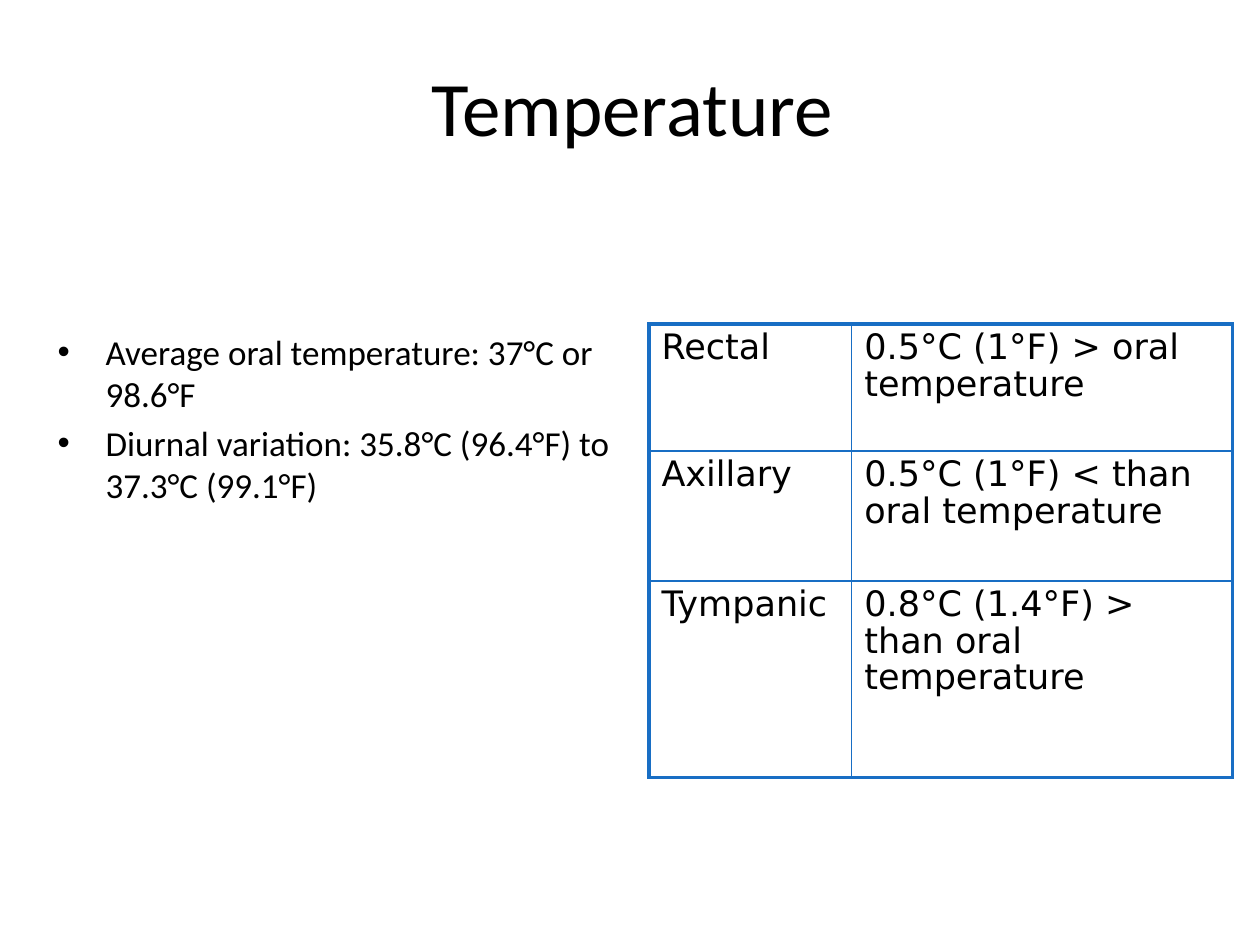
from dataclasses import dataclass

from lxml.etree import SubElement
from pptx import Presentation
from pptx.dml.color import RGBColor
from pptx.enum.text import MSO_ANCHOR, PP_ALIGN
from pptx.oxml.ns import qn
from pptx.util import Inches, Pt


@dataclass(frozen=True)
class Theme:
    ink: RGBColor = RGBColor(0, 0, 0)
    border: str = "186EC4"
    text_font: str = "Calibri"
    table_font: str = "DejaVu Sans"
    title_size: int = 44
    body_size: int = 20
    outer_line: float = 2.25
    inner_line: float = 1


@dataclass(frozen=True)
class Reading:
    site: str
    difference: str
    height: float


THEME = Theme()
FACTS = (
    "Average oral temperature: 37°C or 98.6°F",
    "Diurnal variation: 35.8°C (96.4°F) to 37.3°C (99.1°F)",
)
READINGS = (
    Reading("Rectal", "0.5°C (1°F) > oral temperature", 1.01),
    Reading("Axillary", "0.5°C (1°F) < than oral temperature", 1.03),
    Reading("Tympanic", "0.8°C (1.4°F) > than oral temperature", 1.56),
)
COLUMN_WIDTHS = (1.61, 3.02)
CONTENT_TOP = 2.57


def add_span(para, text: str, font: str, size: int) -> None:
    span = para.add_run()
    span.text = text
    span.font.name = font
    span.font.size = Pt(size)
    span.font.color.rgb = THEME.ink


def add_bullet(para, indent: float) -> None:
    properties = para._p.get_or_add_pPr()
    properties.set("marL", str(Inches(indent)))
    properties.set("indent", str(Inches(-indent)))
    SubElement(properties, qn("a:buFont"), typeface="Arial")
    SubElement(properties, qn("a:buChar"), char="•")


def set_borders(cell, outer_sides: dict[str, bool]) -> None:
    """Draw all four sides, heavier where a side lies on the table's edge."""
    properties = cell._tc.get_or_add_tcPr()
    for index, (side, is_outer) in enumerate(outer_sides.items()):
        width = THEME.outer_line if is_outer else THEME.inner_line
        line = SubElement(properties, qn(f"a:{side}"), w=str(Pt(width)))
        fill = SubElement(line, qn("a:solidFill"))
        SubElement(fill, qn("a:srgbClr"), val=THEME.border)
        properties.insert(index, line)


def format_title(page) -> None:
    title = page.shapes.title
    title.left, title.top = Inches(0.36), Inches(0.25)
    title.width, title.height = Inches(9.32), Inches(1.17)
    title.text_frame.vertical_anchor = MSO_ANCHOR.MIDDLE
    para = title.text_frame.paragraphs[0]
    para.alignment = PP_ALIGN.CENTER
    add_span(para, "Temperature", THEME.text_font, THEME.title_size)


def add_facts(page) -> None:
    box = page.shapes.add_textbox(
        Inches(0.36), Inches(CONTENT_TOP), Inches(4.63), Inches(4.68)
    )
    frame = box.text_frame
    frame.word_wrap = True
    for index, fact in enumerate(FACTS):
        para = frame.add_paragraph() if index else frame.paragraphs[0]
        para.space_before = Pt(0.2 * THEME.body_size)
        add_bullet(para, 0.38)
        add_span(para, fact, THEME.text_font, THEME.body_size)


def add_readings(page) -> None:
    table = page.shapes.add_table(
        len(READINGS), len(COLUMN_WIDTHS), Inches(5.15), Inches(CONTENT_TOP),
        Inches(sum(COLUMN_WIDTHS)),
        Inches(sum(reading.height for reading in READINGS)),
    ).table
    table.first_row = table.horz_banding = False
    for column, width in zip(table.columns, COLUMN_WIDTHS):
        column.width = Inches(width)
    last_row, last_column = len(READINGS) - 1, len(COLUMN_WIDTHS) - 1
    for row, reading in enumerate(READINGS):
        table.rows[row].height = Inches(reading.height)
        for column, text in enumerate((reading.site, reading.difference)):
            cell = table.cell(row, column)
            cell.fill.background()
            set_borders(cell, {
                "lnL": column == 0,
                "lnR": column == last_column,
                "lnT": row == 0,
                "lnB": row == last_row,
            })
            para = cell.text_frame.paragraphs[0]
            para.line_spacing = 0.9
            para.space_before = Pt(0.6 * THEME.body_size)
            add_span(para, text, THEME.table_font, THEME.body_size)


def main() -> None:
    deck = Presentation()
    deck.slide_width, deck.slide_height = Inches(10), Inches(7.5)
    page = deck.slides.add_slide(deck.slide_layouts[5])
    format_title(page)
    add_facts(page)
    add_readings(page)
    deck.save("out.pptx")


if __name__ == "__main__":
    main()
